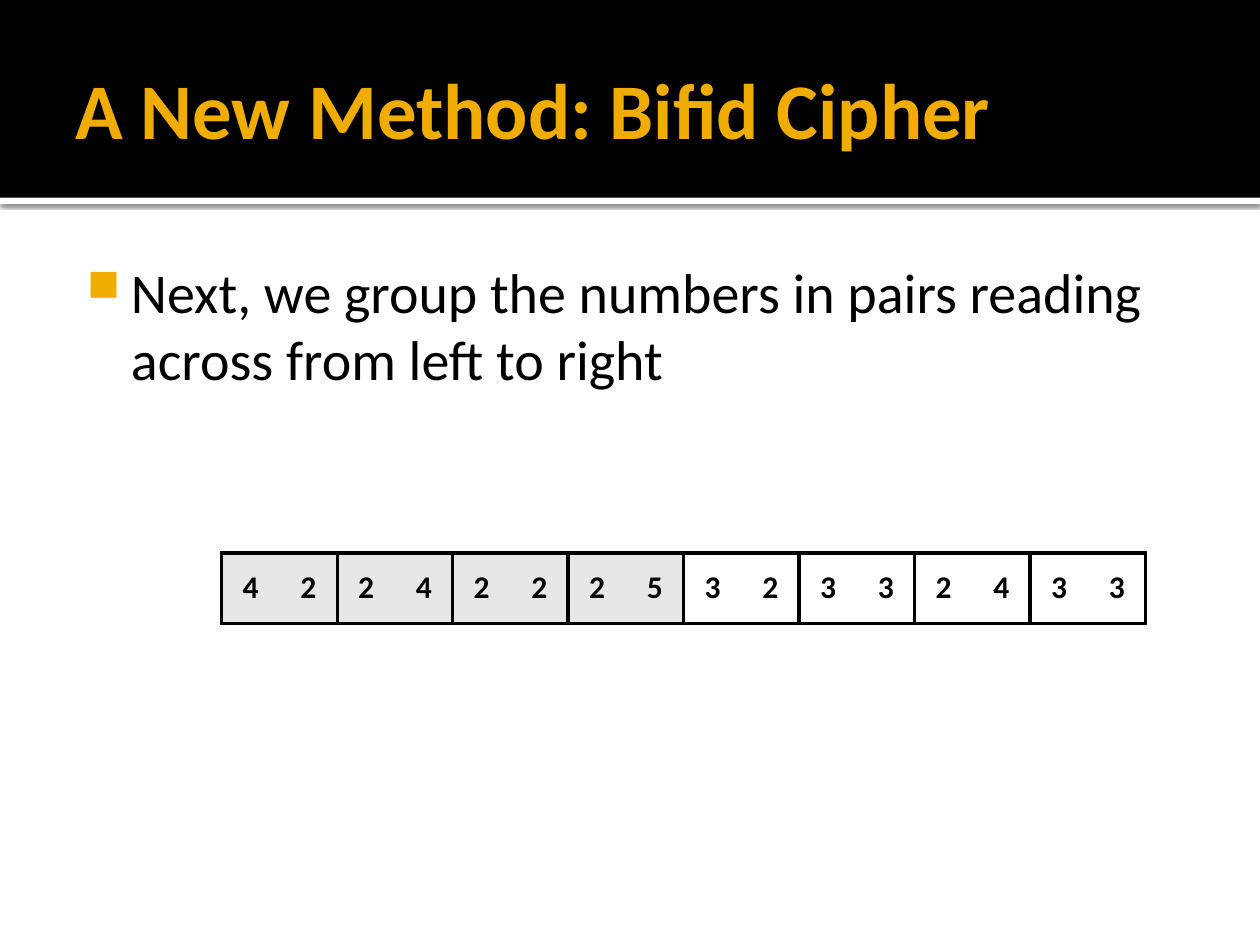
from lxml import etree
from pptx import Presentation, util as u
from pptx.dml.color import RGBColor
from pptx.enum import shapes, text
from pptx.oxml import ns

Pt = u.Pt
HEX = {"black": "000000", "white": "FFFFFF", "gold": "F0AD00", "gray": "E7E7E7"}


def add(root, tag, **attrs):
    return etree.SubElement(root, ns.qn(tag), {k: str(v) for k, v in attrs.items()})


def write(frame, words, size, hue, bold=False):
    par = frame.paragraphs[0]
    run = par.add_run()
    run.text = words
    for key, val in {"name": "Calibri", "size": Pt(size), "bold": bold}.items():
        setattr(run.font, key, val)
    run.font.color.rgb = RGBColor.from_string(HEX[hue])
    return par


deck = Presentation()
deck.slide_width, deck.slide_height = Pt(720), Pt(540)
slide = deck.slides.add_slide(deck.slide_layouts[6])

# White stripe with its shadow, then the black title band
for top, high, hue in [(113, 3.6, "white"), (0, 113, "black")]:
    band = slide.shapes.add_shape(
        shapes.MSO_SHAPE.RECTANGLE, 0, Pt(top), Pt(720), Pt(high))
    band.shadow.inherit = False
    band.fill.solid()
    band.fill.fore_color.rgb = RGBColor.from_string(HEX[hue])
    band.line.fill.background()
    if hue == "white":
        glow = add(band.element.spPr.find(ns.qn("a:effectLst")), "a:outerShdw",
                   blurRad=Pt(2.5), dist=Pt(0.8), dir=90 * 60000,
                   algn="ctr", rotWithShape=0)
        add(add(glow, "a:srgbClr", val=HEX["black"]), "a:alpha", val=60000)

# Title and body text
title = slide.shapes.add_textbox(Pt(36), Pt(12.24), Pt(648), Pt(98.64)).text_frame
body = slide.shapes.add_textbox(Pt(36), Pt(139.68), Pt(648), Pt(364.32)).text_frame
looks = [
    (title, {"margin_left": Pt(7.2), "margin_right": Pt(3.6),
             "vertical_anchor": text.MSO_ANCHOR.MIDDLE}),
    (body, {"margin_left": Pt(4.32), "margin_top": Pt(7.2)}),
]
for frame, look in looks:
    frame.word_wrap = True
    for key, val in look.items():
        setattr(frame, key, val)
write(title, "A New Method: Bifid Cipher", 45, "gold", True)
par = write(body, "Next, we group the numbers in pairs reading across from left to right",
            32, "black")

# Square gold bullet
props = par._p.get_or_add_pPr()
props.set("marL", str(Pt(34.56)))
props.set("indent", str(Pt(-25.2)))
add(add(props, "a:buClr"), "a:srgbClr", val=HEX["gold"])
add(props, "a:buSzPct", val=80000)
add(props, "a:buChar", char="■")

# Number table: the middle row holds the digits, boxed in pairs
digits = "4224222532332433"
wide, high = 33, 40.2
table = slide.shapes.add_table(3, len(digits), Pt(126.72), Pt(275.76),
                               Pt(wide * len(digits)), Pt(high * 3)).table
table.first_row = table.horz_banding = False
for col in table.columns:
    col.width = Pt(wide)
for r, row in enumerate(table.rows):
    row.height = Pt(high)
    for c, cell in enumerate(row.cells):
        # Borders come before the fill in the cell's XML
        lines = {0: "B", 1: "TB" + "LR"[c % 2], 2: "T"}[r]
        tcpr = cell._tc.get_or_add_tcPr()
        for side in "LRTB":
            drawn = side in lines
            edge = add(tcpr, "a:ln" + side, w=Pt(2.25) if drawn else 0)
            if drawn:
                add(add(edge, "a:solidFill"), "a:srgbClr", val=HEX["black"])
            else:
                add(edge, "a:noFill")
        if r == 0:
            cell.fill.background()
            continue
        cell.fill.solid()
        hue = "gray" if r == 1 and c < 8 else "white"
        cell.fill.fore_color.rgb = RGBColor.from_string(HEX[hue])
        if r == 1:
            cell.vertical_anchor = text.MSO_ANCHOR.MIDDLE
            par = write(cell.text_frame, digits[c], 18, "black", True)
            par.alignment = text.PP_ALIGN.CENTER

deck.save("out.pptx")
